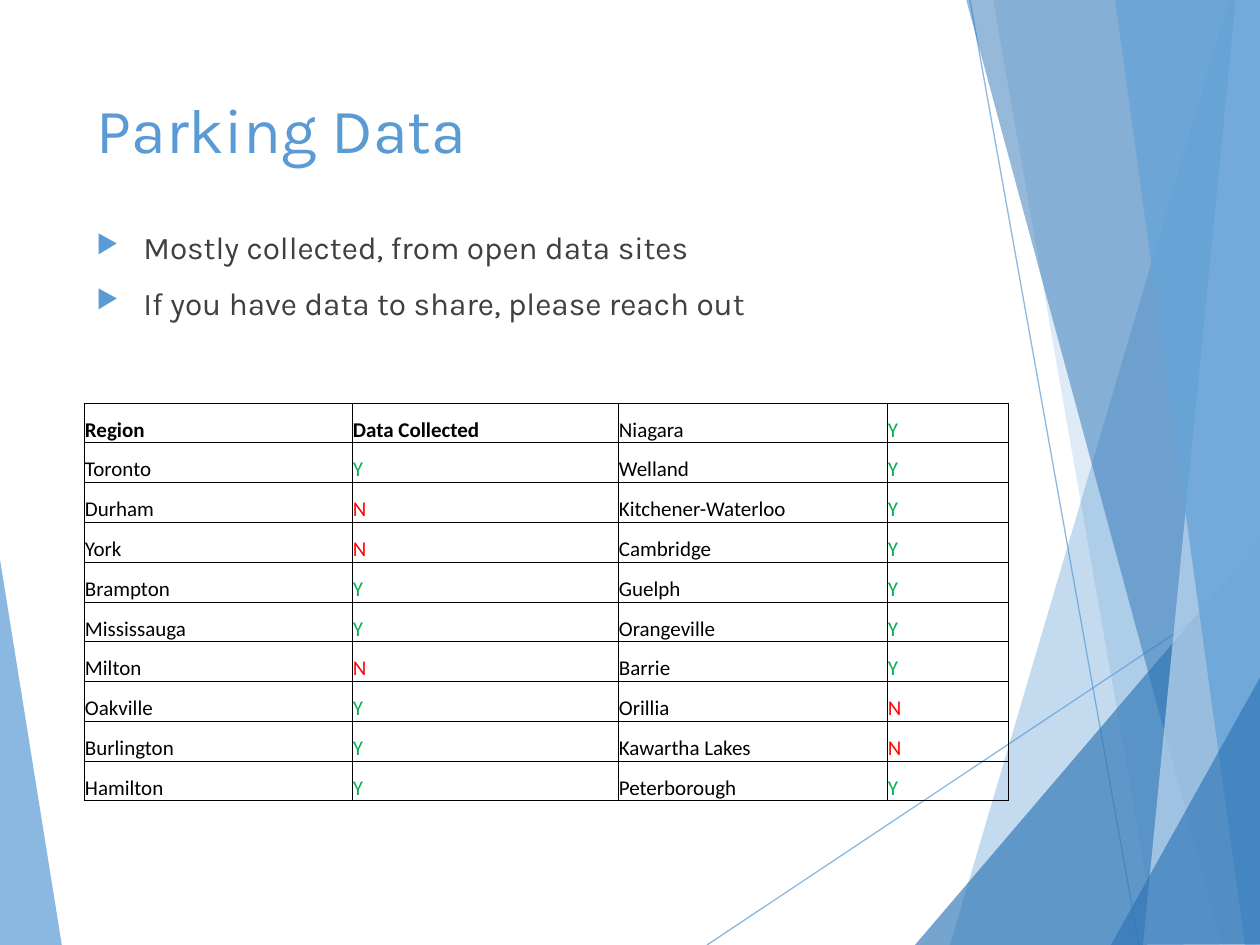
from lxml import etree
from pptx import Presentation
from pptx.dml.color import RGBColor
from pptx.enum.shapes import MSO_CONNECTOR
from pptx.enum.text import MSO_ANCHOR, MSO_AUTO_SIZE, PP_ALIGN
from pptx.oxml.ns import qn
from pptx.util import Pt

STRAIGHT = MSO_CONNECTOR.STRAIGHT
TOP, BOTTOM = MSO_ANCHOR.TOP, MSO_ANCHOR.BOTTOM
NO_FIT = MSO_AUTO_SIZE.NONE
LEFT = PP_ALIGN.LEFT
SCALE = 914400 / 126
BLUE, DARK_BLUE = "5B9BD5", "2E75B6"

TITLE = "Parking Data"
BULLETS = [
    "Mostly collected, from open data sites",
    "If you have data to share, please reach out",
]
ROWS = [
    ("Region", "Data Collected", "Niagara", "Y"),
    ("Toronto", "Y", "Welland", "Y"),
    ("Durham", "N", "Kitchener-Waterloo", "Y"),
    ("York", "N", "Cambridge", "Y"),
    ("Brampton", "Y", "Guelph", "Y"),
    ("Mississauga", "Y", "Orangeville", "Y"),
    ("Milton", "N", "Barrie", "Y"),
    ("Oakville", "Y", "Orillia", "N"),
    ("Burlington", "Y", "Kawartha Lakes", "N"),
    ("Hamilton", "Y", "Peterborough", "Y"),
]
HEADINGS = ROWS[0][:2]
ANSWER_COLORS = {"Y": "00B050", "N": "FF0000"}
COLUMN_WIDTHS = [268, 266, 269, 122]
TABLE_LEFT, TABLE_TOP, TABLE_HEIGHT = 84, 403, 398

LEFT_SHARD = ([(-1, 553), (62, 946), (-1, 945)], BLUE, 70)
LINES = [((707, 945), (1261, 576)), ((970, 0), (1139, 945))]
RIGHT_SHARDS = [
    ([(1229, 0), (950, 945), (1262, 946), (1261, 1)], BLUE, 36),
    ([(993, -1), (1158, 945), (1261, 945), (1261, -1)], BLUE, 20),
    ([(915, 945), (1260, 541), (1261, 945)], DARK_BLUE, 66),
    ([(966, -1), (1222, 945), (1261, 944), (1261, -1)], DARK_BLUE, 50),
    ([(1236, -1), (1143, 945), (1261, 945), (1260, -1)], "BDD7EE", 70),
    ([(1115, -1), (1245, 945), (1262, 945), (1260, -1)], "68A4D8", 82),
    ([(1111, 945), (1262, 674), (1262, 944)], DARK_BLUE, 66),
]


def px(value):
    return round(value * SCALE)


def color(value):
    return RGBColor.from_string(value)


def assign(target, values):
    for name, value in values.items():
        setattr(target, name, value)


def add_child(parent, tag, **attributes):
    return etree.SubElement(parent, qn(tag), attributes)


def set_alpha(fill_format, percent):
    fill_format.fore_color._xFill[0].append(
        etree.Element(qn("a:alpha"), val=str(percent * 1000)))


def set_font(font, name, size, value, bold=False):
    assign(font, {"name": name, "size": Pt(size), "bold": bold})
    font.color.rgb = color(value)


def place(shape, left, top, width, height):
    assign(shape, {"left": px(left), "top": px(top),
                   "width": px(width), "height": px(height)})


def add_shard(page, points, value, percent):
    builder = page.shapes.build_freeform(*points[0], scale=SCALE)
    builder.add_line_segments(points[1:], close=True)
    shard = builder.convert_to_shape()
    shard.shadow.inherit = False
    shard.fill.solid()
    shard.fill.fore_color.rgb = color(value)
    set_alpha(shard.fill, percent)
    shard.line.fill.background()


def add_line(page, start, end):
    line = page.shapes.add_connector(STRAIGHT, *map(px, start + end))
    line.line.width = Pt(0.75)
    line.line.color.rgb = color(BLUE)
    set_alpha(line.line.fill, 70)
    add_child(line._element.spPr, "a:effectLst")


def add_bullet(para):
    properties = para._p.get_or_add_pPr()
    assign_indent = {"marL": str(px(47)), "indent": str(px(-47))}
    properties.attrib.update(assign_indent)
    bullet_color = add_child(properties, "a:buClr")
    add_child(bullet_color, "a:srgbClr", val=BLUE)
    add_child(properties, "a:buSzPct", val="80000")
    add_child(properties, "a:buChar", char="▶")


def add_bullets(page):
    box = page.shapes.add_textbox(px(84), px(222), px(874), px(534))
    frame = box.text_frame
    assign(frame, {"word_wrap": True, "vertical_anchor": TOP})
    for index, text in enumerate(BULLETS):
        para = frame.add_paragraph() if index else frame.paragraphs[0]
        add_bullet(para)
        para.space_before = Pt(10 if index else 0)
        span = para.add_run()
        span.text = text
        set_font(span.font, "Karla", 18, "404040")


def add_borders(cell):
    properties = cell._tc.get_or_add_tcPr()
    for index, side in enumerate(("lnL", "lnR", "lnT", "lnB")):
        border = etree.Element(qn("a:" + side), w=str(Pt(0.5)))
        fill = add_child(border, "a:solidFill")
        add_child(fill, "a:srgbClr", val="000000")
        properties.insert(index, border)


def fill_cell(cell, text):
    assign(cell, {"vertical_anchor": BOTTOM, "margin_left": px(1),
                  "margin_right": px(1), "margin_top": px(1),
                  "margin_bottom": 0})
    cell.fill.background()
    add_borders(cell)
    span = cell.text_frame.paragraphs[0].add_run()
    span.text = text
    set_font(span.font, "Calibri", 12, ANSWER_COLORS.get(text, "000000"),
             text in HEADINGS)


def add_region_table(page):
    table = page.shapes.add_table(
        len(ROWS), len(COLUMN_WIDTHS), px(TABLE_LEFT), px(TABLE_TOP),
        px(sum(COLUMN_WIDTHS)), px(TABLE_HEIGHT)).table
    assign(table, {"first_row": False, "horz_banding": False})
    for column, width in zip(table.columns, COLUMN_WIDTHS):
        column.width = px(width)
    for row, texts in zip(table.rows, ROWS):
        row.height = px(TABLE_HEIGHT / len(ROWS))
        for cell, text in zip(row.cells, texts):
            fill_cell(cell, text)


def add_title(page):
    title = page.shapes.title
    place(title, 84, 84, 874, 181)
    frame = title.text_frame
    assign(frame, {"vertical_anchor": TOP, "auto_size": NO_FIT,
                   "word_wrap": True})
    para = frame.paragraphs[0]
    para.alignment = LEFT
    span = para.add_run()
    span.text = TITLE
    set_font(span.font, "Karla", 36, BLUE)
    page.shapes._spTree.append(title._element)


def main():
    deck = Presentation()
    assign(deck, {"slide_width": px(1260), "slide_height": px(945)})
    page = deck.slides.add_slide(deck.slide_layouts[5])
    add_shard(page, *LEFT_SHARD)
    for start, end in LINES:
        add_line(page, start, end)
    for shard in RIGHT_SHARDS:
        add_shard(page, *shard)
    add_title(page)
    add_bullets(page)
    add_region_table(page)
    deck.save("out.pptx")


if __name__ == "__main__":
    main()
